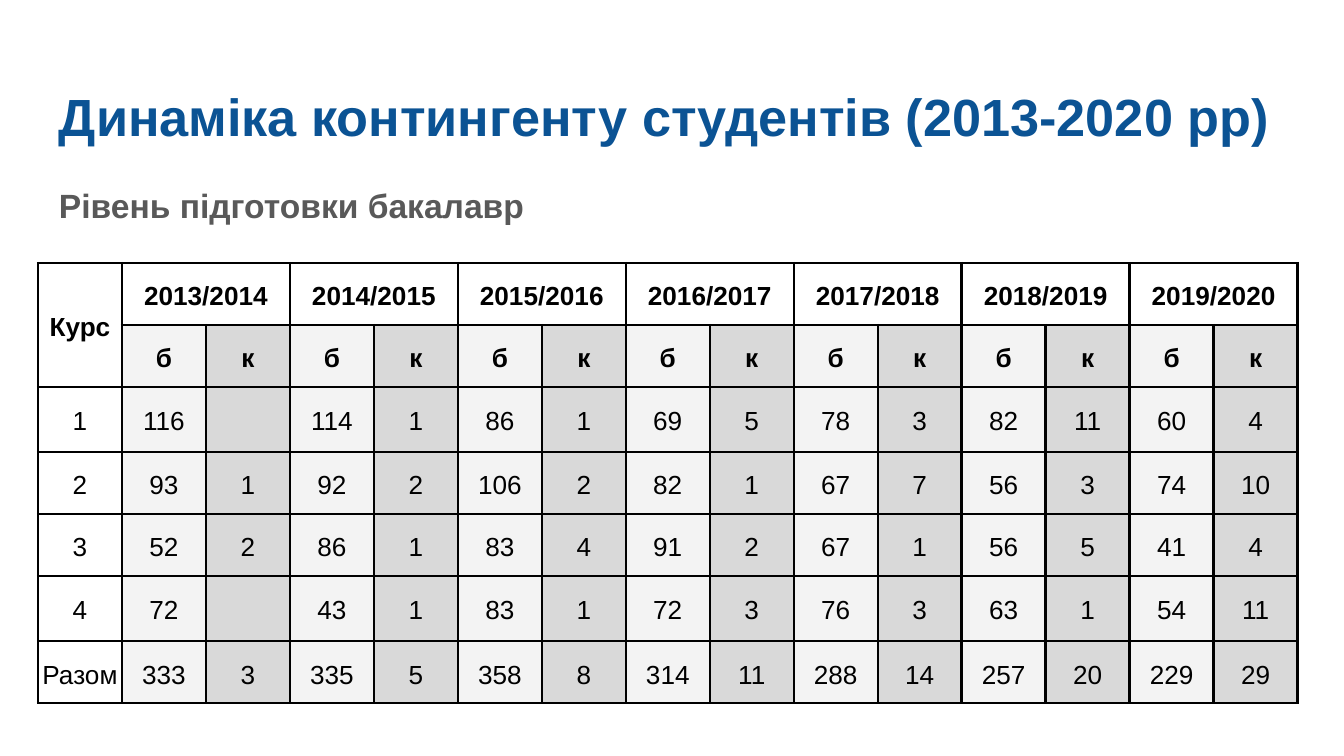
import pptx
import pptx.dml.color
import pptx.enum.text
import pptx.oxml
import pptx.oxml.ns
import pptx.util

COLORS = {"title": "0B5394", "subtitle": "595959", "ink": "000000",
          "budget": "F3F3F3", "contract": "D9D9D9"}
FONT = "Arial"

# text, box (left, top, width, height), top inset, point size, colour
HEADINGS = [
    ("Динаміка контингенту студентів (2013-2020 рр)", (46, 66, 1253, 85), 18, 28, "title"),
    ("Рівень підготовки бакалавр", (46, 169, 1253, 58), 16, 18, "subtitle"),
]
YEARS = ["2013/2014", "2014/2015", "2015/2016", "2016/2017",
         "2017/2018", "2018/2019", "2019/2020"]
COUNTS = [
    ("1", 116, "", 114, 1, 86, 1, 69, 5, 78, 3, 82, 11, 60, 4),
    ("2", 93, 1, 92, 2, 106, 2, 82, 1, 67, 7, 56, 3, 74, 10),
    ("3", 52, 2, 86, 1, 83, 4, 91, 2, 67, 1, 56, 5, 41, 4),
    ("4", 72, "", 43, 1, 83, 1, 72, 3, 76, 3, 63, 1, 54, 11),
    ("Разом", 333, 3, 335, 5, 358, 8, 314, 11, 288, 14, 257, 20, 229, 29),
]
HEADER = ["Курс"] + [label for year in YEARS for label in (year, "")]
SUBHEADER = [""] + ["б", "к"] * len(YEARS)
ROWS = [HEADER, SUBHEADER, *COUNTS]

TABLE_LEFT, TABLE_TOP, COLUMN_WIDTH = 38, 263, 84
ROW_HEIGHTS = [60, 60, 65, 60, 60, 65, 60]
INSET_X, INSET_Y = 4, 13


def px(length):
    """Convert px, at 134.4 to the inch, to EMU."""
    return round(length * 914400 / 134.4)


def style_font(font, size, color, bold):
    font.name = FONT
    font.size = pptx.util.Pt(size)
    font.bold = bold
    font.color.rgb = pptx.dml.color.RGBColor.from_string(COLORS[color])


def add_heading(page, text, place, top_inset, size, color):
    box = page.shapes.add_textbox(*map(px, place))
    frame = box.text_frame
    frame.word_wrap = True
    frame.margin_left = frame.margin_right = frame.margin_bottom = px(INSET_Y)
    frame.margin_top = px(top_inset)
    frame.text = text
    style_font(frame.paragraphs[0].font, size, color, True)


def add_borders(cell):
    properties = cell._tc.get_or_add_tcPr()
    for side in ("lnL", "lnR", "lnT", "lnB"):
        properties.append(pptx.oxml.parse_xml(
            f'<a:{side} {pptx.oxml.ns.nsdecls("a")} w="{pptx.util.Pt(1.5)}">'
            f'<a:solidFill><a:srgbClr val="{COLORS["ink"]}"/></a:solidFill></a:{side}>'))


def fill_cell(cell, row, column):
    add_borders(cell)
    if row == 0 or column == 0:
        cell.fill.background()
    else:
        cell.fill.solid()
        shade = COLORS["budget" if column % 2 else "contract"]
        cell.fill.fore_color.rgb = pptx.dml.color.RGBColor.from_string(shade)
    cell.margin_left = cell.margin_right = px(INSET_X)
    cell.margin_top = cell.margin_bottom = px(INSET_Y)
    anchors = pptx.enum.text.MSO_ANCHOR
    cell.vertical_anchor = anchors.BOTTOM if row == len(ROWS) - 1 else anchors.MIDDLE
    cell.text = str(ROWS[row][column])
    para = cell.text_frame.paragraphs[0]
    para.alignment = pptx.enum.text.PP_ALIGN.CENTER
    para.line_spacing = 1.15
    style_font(para.font, 14, "ink", row < 2)


def add_student_table(page):
    column_count = len(HEADER)
    table = page.shapes.add_table(
        len(ROWS), column_count, px(TABLE_LEFT), px(TABLE_TOP),
        px(COLUMN_WIDTH * column_count), px(sum(ROW_HEIGHTS))).table
    table.first_row = table.horz_banding = False
    for column in table.columns:
        column.width = px(COLUMN_WIDTH)
    for row, height in zip(table.rows, ROW_HEIGHTS):
        row.height = px(height)
    for row in range(len(ROWS)):
        for column in range(column_count):
            fill_cell(table.cell(row, column), row, column)
    table.cell(0, 0).merge(table.cell(1, 0))
    for column in range(1, column_count, 2):
        table.cell(0, column).merge(table.cell(0, column + 1))


def main():
    deck = pptx.Presentation()
    deck.slide_width, deck.slide_height = px(1344), px(756)
    page = deck.slides.add_slide(deck.slide_layouts[6])
    for heading in HEADINGS:
        add_heading(page, *heading)
    add_student_table(page)
    deck.save("out.pptx")


if __name__ == "__main__":
    main()
